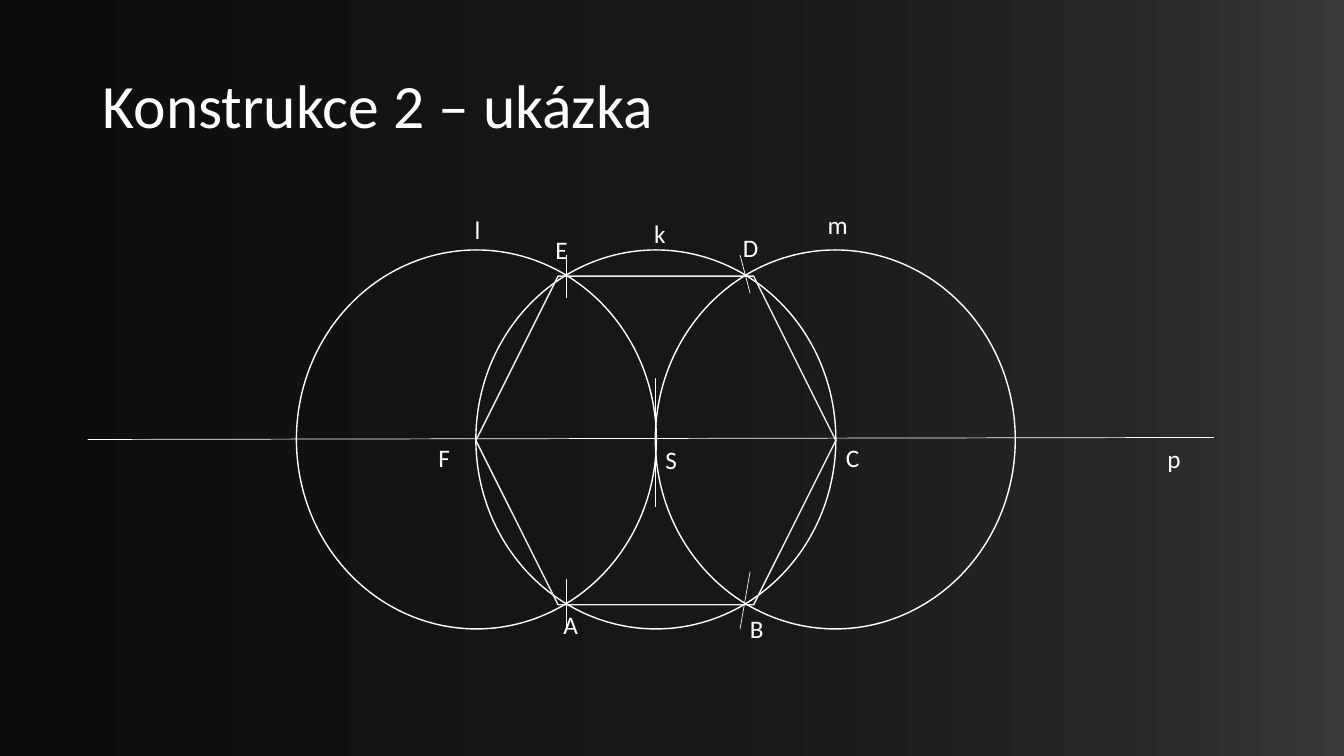
from copy import deepcopy

from pptx import Presentation
from pptx.dml.color import RGBColor
from pptx.enum.shapes import MSO_CONNECTOR, MSO_SHAPE as SHAPE
from pptx.enum.text import MSO_ANCHOR as ANCHOR
from pptx.oxml.ns import qn
from pptx.oxml.xmlchemy import OxmlElement
from pptx.util import Pt

PX = 9144  # 100 px to the inch
COLORS = {"white": "FFFFFF", "pale": "F2F2F2"}
BACKGROUND = {0: "0D0D0D", 52: "181717", 83: "262626", 100: "3B3838"}

presentation = Presentation()
presentation.slide_width = 1333 * PX
presentation.slide_height = 750 * PX
slide = presentation.slides.add_slide(presentation.slide_layouts[6])


def add_text(text, left, top, width, height=40, size=18, anchor=ANCHOR.TOP, spacing=1.0):
    box = slide.shapes.add_textbox(left * PX, top * PX, width * PX, height * PX)
    frame = box.text_frame
    frame.word_wrap = True
    frame.vertical_anchor = anchor
    paragraph = frame.paragraphs[0]
    paragraph.line_spacing = spacing
    run = paragraph.add_run()
    run.text = text
    run.font.name = "Calibri"
    run.font.size = Pt(size)
    run.font.color.rgb = RGBColor.from_string(COLORS["white"])


def add_outline(kind, left, top, width, height, color="white"):
    shape = slide.shapes.add_shape(kind, left * PX, top * PX, width * PX, height * PX)
    shape.shadow.inherit = False
    shape.fill.background()
    shape.line.color.rgb = RGBColor.from_string(COLORS[color])
    shape.line.width = Pt(1)


# Background gradient, left to right
fill = slide.background.fill
fill.gradient()
fill.gradient_angle = 0
stop_list = next(slide.element.iter(qn("a:gsLst")))
while len(stop_list) < len(BACKGROUND):
    stop_list.append(deepcopy(stop_list[0]))
for stop, (percent, color) in zip(fill.gradient_stops, BACKGROUND.items()):
    stop.position = percent / 100
    stop.color.rgb = RGBColor.from_string(color)

# Title
add_text("Konstrukce 2 – ukázka", 92, 35, 1150, height=145, size=44,
         anchor=ANCHOR.MIDDLE, spacing=0.9)

# Circles l, k, m, each one radius further right
for index in range(3):
    add_outline(SHAPE.FLOWCHART_CONNECTOR, 294 + 178 * index, 248, 357, 376)

# Line p and the marks at the intersections
lines = [
    (87, 436, 1204, 434, "white"),
    (650, 375, 650, 503, "white"),
    (562, 253, 562, 296, "white"),
    (744, 291, 734, 253, "white"),
    (562, 574, 562, 624, "pale"),
    (744, 567, 734, 624, "pale"),
]
for x1, y1, x2, y2, color in lines:
    line = slide.shapes.add_connector(MSO_CONNECTOR.STRAIGHT, x1 * PX, y1 * PX, x2 * PX, y2 * PX)
    line.line.color.rgb = RGBColor.from_string(COLORS[color])
    line.line.width = Pt(0.5)
    line.element.spPr.append(OxmlElement("a:effectLst"))

# Hexagon ABCDEF
add_outline(SHAPE.HEXAGON, 472, 274, 357, 326, color="pale")

# Labels of points, circles and line: left, top, width
labels = {
    "S": (650, 436, 94), "A": (549, 600, 85), "B": (734, 604, 103),
    "C": (829, 434, 72), "D": (727, 226, 101), "E": (541, 228, 65),
    "F": (425, 434, 94), "k": (639, 212, 112), "l": (461, 208, 149),
    "m": (811, 203, 51), "p": (1148, 435, 88),
}
for label, place in labels.items():
    add_text(label, *place)

presentation.save("out.pptx")
